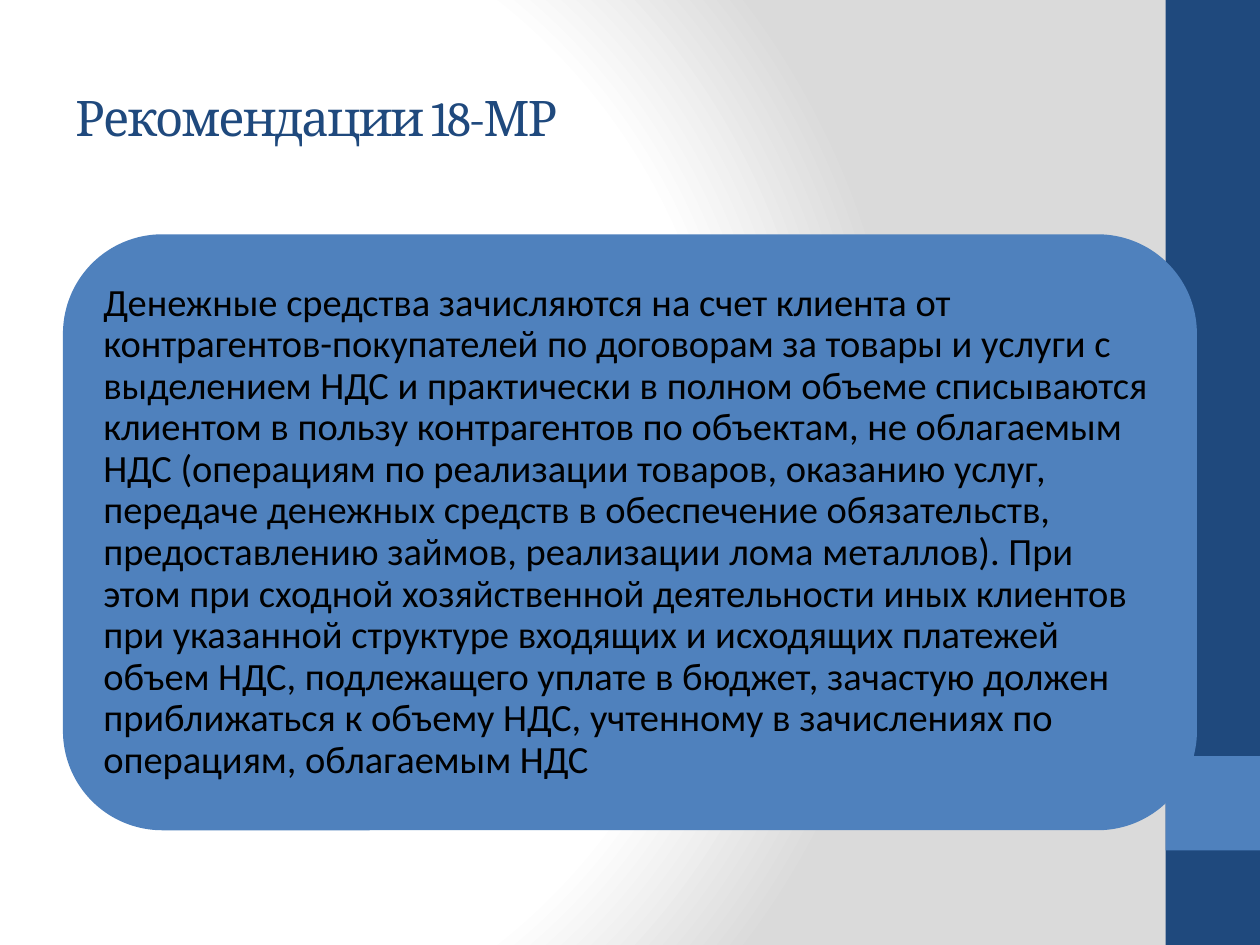
"""Build a slide with a title and one rounded text panel beside a dark side band."""
from pptx import Presentation
from pptx.dml.color import RGBColor
from pptx.enum.shapes import MSO_SHAPE
from pptx.enum.text import MSO_ANCHOR
from pptx.oxml import parse_xml
from pptx.util import Pt

PX = 9144
RECTANGLE = MSO_SHAPE.RECTANGLE
ROUNDED = MSO_SHAPE.ROUNDED_RECTANGLE
MIDDLE = MSO_ANCHOR.MIDDLE
NAVY, BLUE, BLACK = "1F497D", "4F81BD", "000000"
GRADIENT_STOPS = [(0, "FFFFFF"), (75, "FFFFFF"), (100, "DADADA")]
TITLE = "Рекомендации 18-МР"
BODY = (
    "Денежные средства зачисляются на счет клиента от контрагентов-покупателей "
    "по договорам за товары и услуги с выделением НДС и практически в полном объеме "
    "списываются клиентом в пользу контрагентов по объектам, не облагаемым НДС "
    "(операциям по реализации товаров, оказанию услуг, передаче денежных средств "
    "в обеспечение обязательств, предоставлению займов, реализации лома металлов). "
    "При этом при сходной хозяйственной деятельности иных клиентов при указанной "
    "структуре входящих и исходящих платежей объем НДС, подлежащего уплате в бюджет, "
    "зачастую должен приближаться к объему НДС, учтенному в зачислениях по операциям, "
    "облагаемым НДС"
)


def color(value):
    return RGBColor.from_string(value)


def add_text(slide, box, text, font_name, size, font_color, inset):
    shape = slide.shapes.add_textbox(*(length * PX for length in box))
    frame = shape.text_frame
    frame.word_wrap = True
    frame.vertical_anchor = MIDDLE
    frame.margin_left = frame.margin_right = inset * PX
    frame.margin_top = frame.margin_bottom = inset * PX
    paragraph = frame.paragraphs[0]
    paragraph.text = text
    font = paragraph.runs[0].font
    font.name = font_name
    font.size = Pt(size)
    font.color.rgb = color(font_color)
    return paragraph


presentation = Presentation()
presentation.slide_width = 1000 * PX
presentation.slide_height = 750 * PX
slide = presentation.slides.add_slide(presentation.slide_layouts[6])

stops = "".join(
    f'<a:gs pos="{position * 1000}"><a:srgbClr val="{value}"/></a:gs>'
    for position, value in GRADIENT_STOPS
)
background = parse_xml(
    '<p:bg xmlns:p="http://schemas.openxmlformats.org/presentationml/2006/main" '
    'xmlns:a="http://schemas.openxmlformats.org/drawingml/2006/main">'
    f'<p:bgPr><a:gradFill rotWithShape="1"><a:gsLst>{stops}</a:gsLst>'
    '<a:path path="circle"><a:fillToRect l="20000" t="50000" r="100000" b="50000"/></a:path>'
    "</a:gradFill><a:effectLst/></p:bgPr></p:bg>"
)
slide.element.cSld.insert(0, background)

for kind, box, fill in [
    (RECTANGLE, (925, 0, 75, 750), NAVY),
    (RECTANGLE, (925, 600, 75, 75), BLUE),
    (ROUNDED, (50, 186, 900, 473), BLUE),
]:
    shape = slide.shapes.add_shape(kind, *(length * PX for length in box))
    shape.shadow.inherit = False
    shape.fill.solid()
    shape.fill.fore_color.rgb = color(fill)
    shape.line.fill.background()

title = add_text(slide, (50, 30, 833, 125), TITLE, "Cambria", 28, NAVY, 10)
title.runs[0].font._element.set("spc", "-100")
body = add_text(slide, (73, 209, 854, 427), BODY, "Calibri", 22, BLACK, 9)
body.line_spacing = 0.9

presentation.save("out.pptx")
